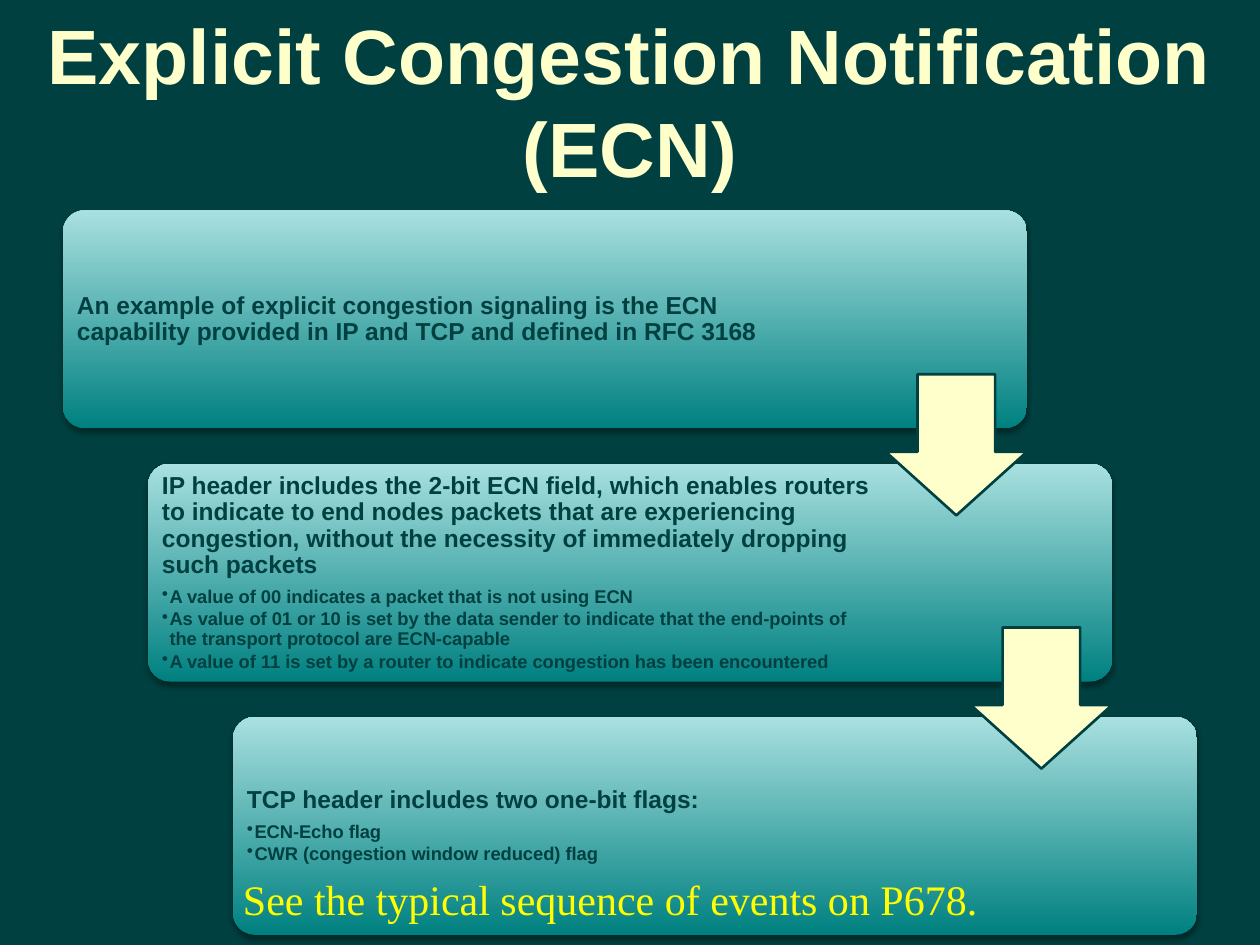
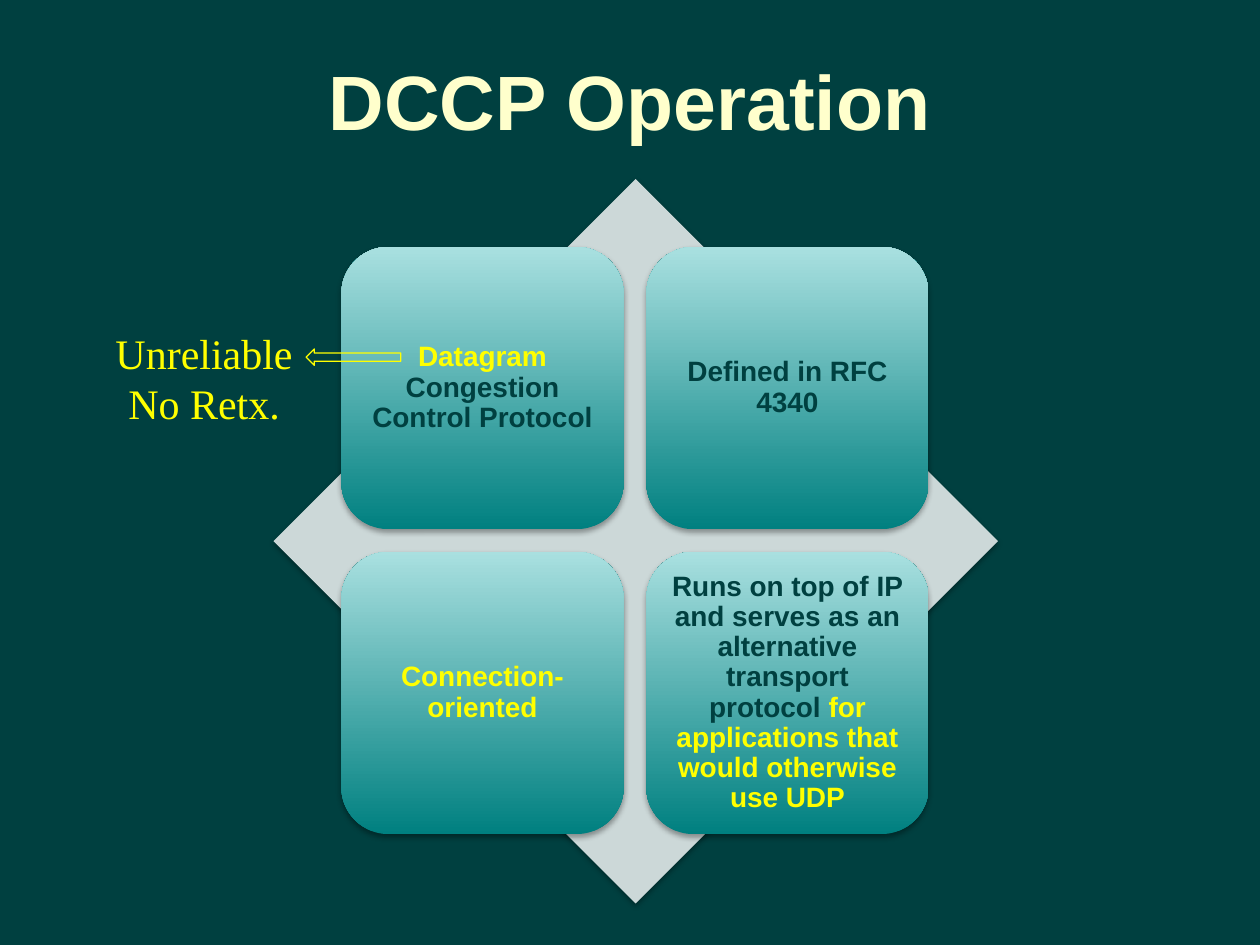
"""Build two slides on explicit congestion notification and DCCP."""
from itertools import product

from lxml.etree import SubElement
from pptx import Presentation
from pptx.dml.color import RGBColor
from pptx.enum.shapes import MSO_SHAPE as Shape
from pptx.enum.text import MSO_ANCHOR as Anchor, MSO_AUTO_SIZE as AutoSize, PP_ALIGN as Align
from pptx.oxml.ns import qn
from pptx.util import Inches, Pt

COLORS = {
    "background": "004040",
    "title": "FFFFCC",
    "card_bottom": "008080",
    "card_top": "A9E0E0",
    "text": "004040",
    "highlight": "FFFF00",
    "diamond": "CCD8D8",
    "arrow": "FFFFCC",
}

ECN_TITLE = "Explicit Congestion Notification (ECN)"
ECN_STEPS = [
    ("An example of explicit congestion signaling is the ECN capability provided in IP and TCP "
     "and defined in RFC 3168", []),
    ("IP header includes the 2-bit ECN field, which enables routers to indicate to end nodes "
     "packets that are experiencing congestion, without the necessity of immediately dropping "
     "such packets",
     ["A value of 00 indicates a packet that is not using ECN",
      "As value of 01 or 10 is set by the data sender to indicate that the end-points of the "
      "transport protocol are ECN-capable",
      "A value of 11 is set by a router to indicate congestion has been encountered"]),
    ("TCP header includes two one-bit flags:",
     ["ECN-Echo flag", "CWR (congestion window reduced) flag"]),
]
ECN_NOTE = ["See the typical sequence of events on P678."]

DCCP_TITLE = "DCCP Operation"
DCCP_CARDS = [
    [("Datagram ", "highlight"), ("Congestion Control Protocol", "text")],
    [("Defined in RFC 4340", "text")],
    [("Connection-oriented", "highlight")],
    [("Runs on top of IP and serves as an alternative transport protocol ", "text"),
     ("for applications that would otherwise use UDP", "highlight")],
]
DCCP_NOTE = ["Unreliable", "No Retx."]

STEP_WIDTH, STEP_HEIGHT = 7.65, 1.73
STEP_LEFT, STEP_TOP = 0.5, 1.67
STEP_SHIFT, STEP_PITCH = 0.675, 2.01
ARROW_SIZE, ARROW_DROP = 1.12, 1.3
CARD_SIZE, CARD_PITCH = 2.24, 2.42
CARD_LEFT, CARD_TOP = 2.71, 1.96


def color(name):
    return RGBColor.from_string(COLORS[name])


def set_font(font, name, size, color_name, bold=False):
    font.name, font.size, font.bold = name, Pt(size), bold
    font.color.rgb = color(color_name)


def add_slide(presentation, title, left, width):
    slide = presentation.slides.add_slide(presentation.slide_layouts[5])
    shape = slide.shapes.title
    shape.left, shape.top, shape.width, shape.height = map(Inches, (left, 0.17, width, 1.25))
    frame = shape.text_frame
    frame.text = title
    frame.auto_size, frame.vertical_anchor = AutoSize.NONE, Anchor.MIDDLE
    paragraph = frame.paragraphs[0]
    paragraph.alignment = Align.CENTER
    set_font(paragraph.font, "Arial", 44, "title", True)
    return slide


def add_shape(slide, kind, box, fill=None, line=None, line_width=1, adjustments=()):
    shape = slide.shapes.add_shape(kind, *map(Inches, box))
    shape.shadow.inherit = False
    for index, value in enumerate(adjustments):
        shape.adjustments[index] = value
    if fill:
        shape.fill.solid()
        shape.fill.fore_color.rgb = color(fill)
    else:
        shape.fill.background()
    if line:
        shape.line.color.rgb = color(line)
        shape.line.width = Pt(line_width)
    else:
        shape.line.fill.background()
    return shape


def add_shadow(shape):
    effects = shape.element.spPr.find(qn("a:effectLst"))
    shadow = SubElement(effects, qn("a:outerShdw"), blurRad=str(Pt(3.1)), dist=str(Pt(1.8)),
                        dir="5400000", rotWithShape="0")
    black = SubElement(shadow, qn("a:srgbClr"), val="000000")
    SubElement(black, qn("a:alpha"), val="35000")


def add_card(slide, box, margin, adjustments=()):
    card = add_shape(slide, Shape.ROUNDED_RECTANGLE, box, adjustments=adjustments)
    add_shadow(card)
    card.fill.gradient()
    card.fill.gradient_angle = 90
    for stop, name, position in zip(card.fill.gradient_stops, ("card_bottom", "card_top"), (0, 1)):
        stop.color.rgb = color(name)
        stop.position = position
    frame = card.text_frame
    frame.word_wrap, frame.vertical_anchor = True, Anchor.MIDDLE
    frame.margin_left = frame.margin_right = Inches(margin)
    frame.margin_top = frame.margin_bottom = Inches(margin)
    return frame


def format_card_paragraph(paragraph, size, alignment, space_after, bullet=False):
    paragraph.alignment = alignment
    paragraph.line_spacing = 0.9
    paragraph.space_after = Pt(space_after)
    if bullet:
        properties = paragraph._p.get_or_add_pPr()
        properties.set("marL", str(Inches(0.06)))
        properties.set("indent", str(Inches(-0.06)))
        SubElement(properties, qn("a:buChar"), char="•")
    set_font(paragraph.font, "Arial", size, "text", True)


def add_note(slide, lines, box, alignment):
    frame = slide.shapes.add_textbox(*map(Inches, box)).text_frame
    frame.word_wrap, frame.auto_size = False, AutoSize.SHAPE_TO_FIT_TEXT
    frame.text = "\n".join(lines)
    for paragraph in frame.paragraphs:
        paragraph.alignment = alignment
        set_font(paragraph.font, "Times New Roman", 24, "highlight")


def build_ecn_slide(presentation):
    slide = add_slide(presentation, ECN_TITLE, 0, 10)
    corners = [(STEP_LEFT + i * STEP_SHIFT, STEP_TOP + i * STEP_PITCH)
               for i in range(len(ECN_STEPS))]
    for (left, top), (heading, bullets) in zip(corners, ECN_STEPS):
        frame = add_card(slide, (left, top, STEP_WIDTH, STEP_HEIGHT), 0.06, [0.1])
        frame.margin_right = Inches(1.86)
        frame.text = "\n".join([heading, *bullets])
        first, *rest = frame.paragraphs
        format_card_paragraph(first, 14, Align.LEFT, 5)
        for paragraph in rest:
            format_card_paragraph(paragraph, 10.5, Align.LEFT, 1.5, bullet=True)
    for left, top in corners[:-1]:
        box = (left + STEP_WIDTH - ARROW_SIZE, top + ARROW_DROP, ARROW_SIZE, ARROW_SIZE)
        add_shape(slide, Shape.DOWN_ARROW, box, "arrow", "background", 1.5, (0.55, 0.45))
    add_note(slide, ECN_NOTE, (1.83, 6.88, 6.09, 0.5), Align.LEFT)


def build_dccp_slide(presentation):
    slide = add_slide(presentation, DCCP_TITLE, 0.5, 9)
    add_shadow(add_shape(slide, Shape.DIAMOND, (2.17, 1.42, 5.75, 5.75), "diamond"))
    for (row, column), runs in zip(product(range(2), repeat=2), DCCP_CARDS):
        box = (CARD_LEFT + column * CARD_PITCH, CARD_TOP + row * CARD_PITCH, CARD_SIZE, CARD_SIZE)
        paragraph = add_card(slide, box, 0.07).paragraphs[0]
        format_card_paragraph(paragraph, 16, Align.CENTER, 5.5)
        for text, color_name in runs:
            run = paragraph.add_run()
            run.text = text
            run.font.color.rgb = color(color_name)
    add_note(slide, DCCP_NOTE, (0.81, 2.55, 1.62, 0.91), Align.CENTER)
    add_shape(slide, Shape.LEFT_ARROW, (2.43, 2.77, 0.75, 0.13), line="highlight", line_width=0.75)


def main():
    presentation = Presentation()
    presentation.slide_width, presentation.slide_height = Inches(10), Inches(7.5)
    background = presentation.slide_master.background.fill
    background.solid()
    background.fore_color.rgb = color("background")
    build_ecn_slide(presentation)
    build_dccp_slide(presentation)
    presentation.save("out.pptx")


if __name__ == "__main__":
    main()
